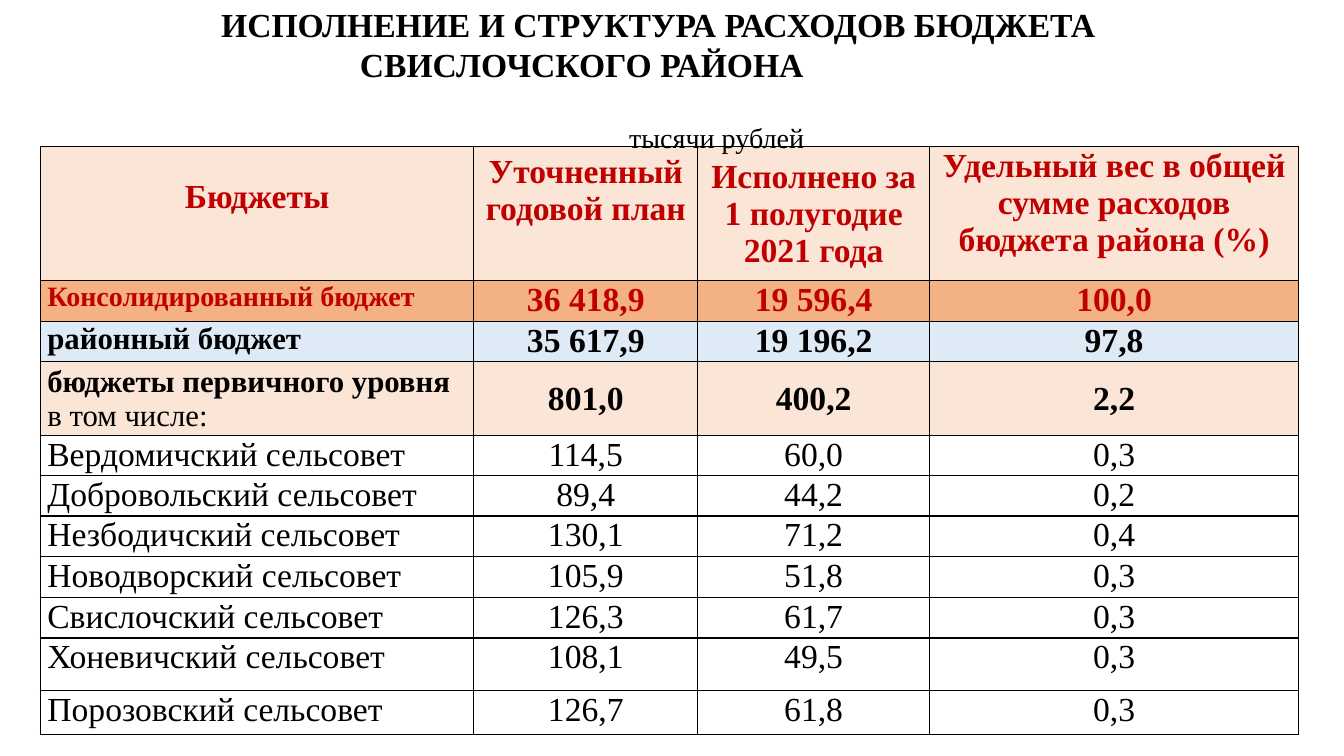
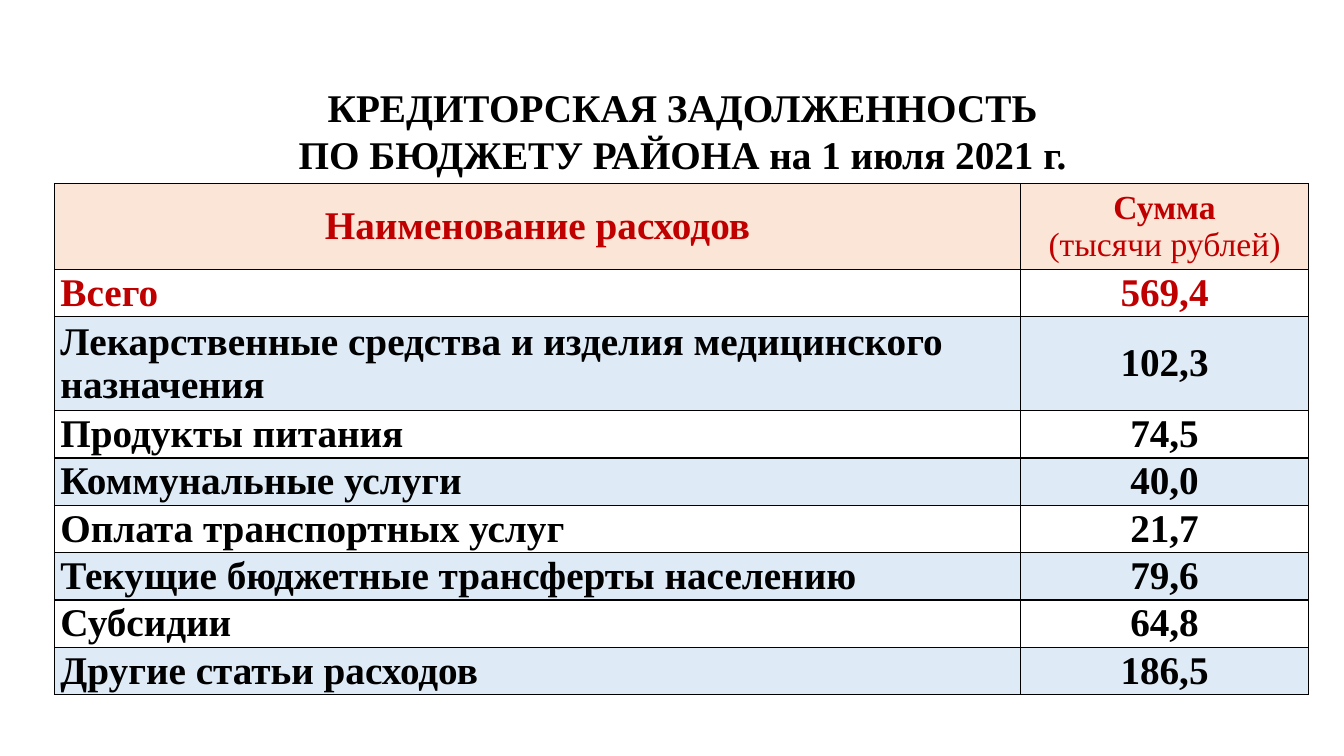
"""Build two budget slides: spending by budget and accounts payable."""
from lxml import etree
from pptx import Presentation
from pptx import util as u
from pptx.dml.color import RGBColor
from pptx.enum import text
from pptx.oxml.ns import qn

FONT = "Times New Roman"
BLACK = RGBColor(0x00, 0x00, 0x00)
WHITE = RGBColor(0xFF, 0xFF, 0xFF)
RED = RGBColor(0xC0, 0x00, 0x00)
PEACH = RGBColor(0xFB, 0xE5, 0xD6)
ORANGE = RGBColor(0xF4, 0xB1, 0x83)
BLUE = RGBColor(0xDE, 0xEB, 0xF7)
TOP, MIDDLE = text.MSO_ANCHOR.TOP, text.MSO_ANCHOR.MIDDLE
LEFT, CENTER = text.PP_ALIGN.LEFT, text.PP_ALIGN.CENTER

SPENDING_TITLE = ["ИСПОЛНЕНИЕ И СТРУКТУРА РАСХОДОВ БЮДЖЕТА", "СВИСЛОЧСКОГО РАЙОНА"]
UNIT = "тысячи рублей"
SPENDING_COLS = [430, 222, 230, 366]
HEADER_TOPS = [32, 7, 12, 1]
COUNCILS = [
    (40, "Вердомичский сельсовет", "114,5", "60,0", "0,3"),
    (40, "Добровольский сельсовет", "89,4", "44,2", "0,2"),
    (40, "Незбодичский сельсовет", "130,1", "71,2", "0,4"),
    (41, "Новодворский сельсовет", "105,9", "51,8", "0,3"),
    (40, "Свислочский сельсовет", "126,3", "61,7", "0,3"),
    (52, "Хоневичский сельсовет", "108,1", "49,5", "0,3"),
    (44, "Порозовский сельсовет", "126,7", "61,8", "0,3"),
]
SPENDING_ROWS = [
    (133, PEACH, RED, (24, 24), True, TOP,
     ["Бюджеты", "Уточненный годовой план", "Исполнено за 1 полугодие 2021 года",
      "Удельный вес в общей сумме расходов бюджета района (%)"]),
    (41, ORANGE, RED, (20, 24), True, TOP,
     ["Консолидированный бюджет", "36 418,9", "19 596,4", "100,0"]),
    (40, BLUE, BLACK, (22, 24), True, TOP,
     ["районный бюджет", "35 617,9", "19 196,2", "97,8"]),
    (73, PEACH, BLACK, (22, 24), True, MIDDLE,
     ["бюджеты первичного уровня\nв том числе:", "801,0", "400,2", "2,2"]),
] + [(height, WHITE, BLACK, (24, 24), False, TOP, texts) for height, *texts in COUNCILS]

DEBT_TITLE = ["КРЕДИТОРСКАЯ ЗАДОЛЖЕННОСТЬ", "ПО БЮДЖЕТУ РАЙОНА на 1 июля 2021 г."]
DEBT_COLS = [958, 286]
DEBTS = [
    (93, "Лекарственные средства и изделия медицинского назначения", "102,3"),
    (47, "Продукты питания", "74,5"),
    (47, "Коммунальные услуги", "40,0"),
    (47, "Оплата транспортных услуг", "21,7"),
    (47, "Текущие бюджетные трансферты населению", "79,6"),
    (47, "Субсидии", "64,8"),
    (47, "Другие статьи расходов", "186,5"),
]
DEBT_ROWS = [
    (85, PEACH, RED, (28, 24), True, MIDDLE,
     ["Наименование расходов", "Сумма\n(тысячи рублей)"]),
    (47, WHITE, RED, (28, 28), True, MIDDLE, ["Всего", "569,4"]),
] + [(height, (BLUE, WHITE)[i % 2], BLACK, (28, 28), True, MIDDLE, texts)
     for i, (height, *texts) in enumerate(DEBTS)]


def px(n):
    return u.Emu(n * 9144)


def style(p, size, color, bold, align):
    p.alignment = align
    for r in p.runs:
        f = r.font
        f.name, f.size, f.bold = FONT, u.Pt(size), bold
        f.color.rgb = color


def add_text(s, box, lines, size, bold, align):
    tf = s.shapes.add_textbox(*map(px, box)).text_frame
    tf.word_wrap = True
    tf.margin_left = tf.margin_top = tf.margin_right = tf.margin_bottom = 0
    tf.text = "\n".join(lines)
    for p in tf.paragraphs:
        style(p, size, BLACK, bold, align)
    return tf


def add_title(s, box, lines, size):
    tf = add_text(s, box, lines, size, True, CENTER)
    for p in tf.paragraphs:
        p.line_spacing = u.Pt(size * 1.2)
    return tf


def add_borders(cell):
    tcPr = cell._tc.get_or_add_tcPr()
    for i, side in enumerate(("lnL", "lnR", "lnT", "lnB")):
        ln = etree.Element(qn("a:" + side), w=str(u.Pt(1)))
        fill = etree.SubElement(ln, qn("a:solidFill"))
        etree.SubElement(fill, qn("a:srgbClr"), val=str(BLACK))
        tcPr.insert(i, ln)


def add_table(s, left, top, cols, rows, side, upper):
    heights = [row[0] for row in rows]
    tbl = s.shapes.add_table(len(rows), len(cols), px(left), px(top),
                             px(sum(cols)), px(sum(heights))).table
    for col, width in zip(tbl.columns, cols):
        col.width = px(width)
    for i, (height, fill, color, sizes, bold, anchor, texts) in enumerate(rows):
        tbl.rows[i].height = px(height)
        for j, value in enumerate(texts):
            cell = tbl.cell(i, j)
            cell.margin_left = cell.margin_right = px(side)
            cell.margin_top, cell.margin_bottom = px(upper), 0
            cell.vertical_anchor = anchor
            cell.fill.solid()
            cell.fill.fore_color.rgb = fill
            add_borders(cell)
            cell.text_frame.text = value
            for k, p in enumerate(cell.text_frame.paragraphs):
                style(p, sizes[min(j, 1)], color, bold and k == 0,
                      CENTER if i == 0 or j > 0 else LEFT)
    return tbl


def spending_slide(prs):
    s = prs.slides.add_slide(prs.slide_layouts[6])
    tbl = add_table(s, 40, 145, SPENDING_COLS, SPENDING_ROWS, 7, 1)
    for cell, top in zip(tbl.rows[0].cells, HEADER_TOPS):
        cell.margin_top = px(top)
    tf = add_title(s, (0, 4, 1306, 80), SPENDING_TITLE, 24)
    tf.paragraphs[1]._p.get_or_add_pPr().set("marR", str(px(152)))
    add_text(s, (624, 120, 200, 31), [UNIT], 20, False, LEFT)


def debt_slide(prs):
    s = prs.slides.add_slide(prs.slide_layouts[6])
    add_title(s, (163, 83, 1028, 94), DEBT_TITLE, 28)
    add_table(s, 54, 182, DEBT_COLS, DEBT_ROWS, 6, 0)


def main():
    prs = Presentation()
    prs.slide_width, prs.slide_height = px(1333), px(750)
    spending_slide(prs)
    debt_slide(prs)
    prs.save("out.pptx")


if __name__ == "__main__":
    main()
